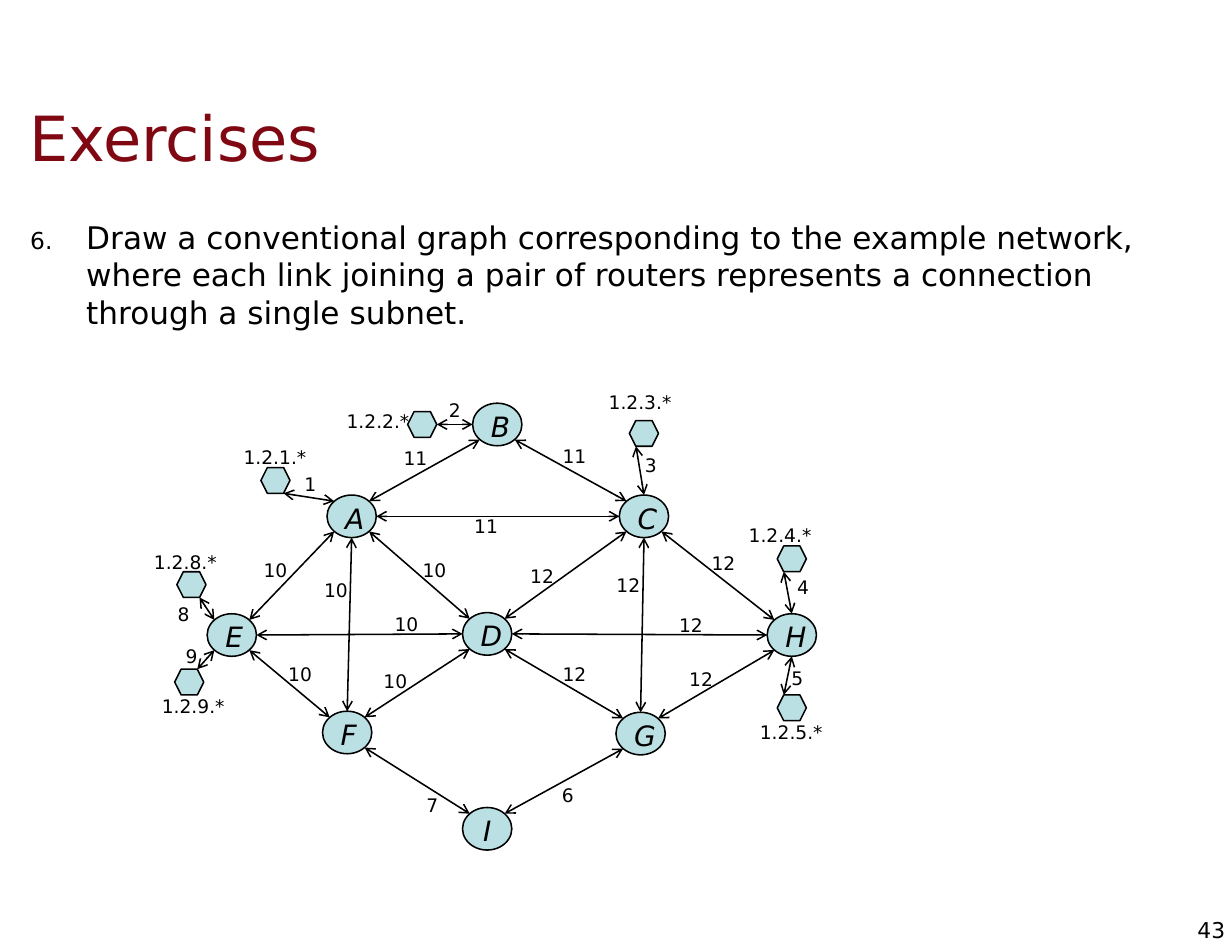
from typing import NamedTuple

from lxml import etree
from pptx import Presentation
from pptx import util as u
from pptx.dml.color import RGBColor
from pptx.enum import shapes, text
from pptx.oxml import ns

FONT = "DejaVu Sans"
COLORS = {"title": "7F0813", "ink": "000000", "node": "BBE0E3"}
CELL = u.Inches(0.1)


class Point(NamedTuple):
    column: float
    row: float


class Size(NamedTuple):
    columns: float
    rows: float


class Link(NamedTuple):
    ends: str
    weight: str
    label: Point


class Subnet(NamedTuple):
    address: str
    router: str
    center: Point
    address_center: Point
    weight: str
    label: Point


ROUTER_SIZE = Size(4.4, 3.8)
SUBNET_SIZE = Size(2.6, 2.3)
WEIGHT_SIZE = Size(5.4, 2)
ADDRESS_SIZE = Size(6.7, 2)
ROUTER_CORNER = Size(0.71, 0.71)
SUBNET_CORNER = Size(0.55, 1)

ROUTERS = {
    "A": Point(31.4, 46.1), "B": Point(44.4, 37.9), "C": Point(57.5, 46.1),
    "D": Point(43.5, 56.6), "E": Point(20.7, 56.7), "F": Point(31, 65.4),
    "G": Point(57.2, 65.5), "H": Point(70.7, 56.7), "I": Point(43.5, 74),
}

LINKS = [
    Link("AB", "11", Point(37.1, 40.9)), Link("CA", "11", Point(43.4, 47)),
    Link("BC", "11", Point(51.3, 40.7)), Link("CD", "12", Point(48.4, 51.4)),
    Link("HD", "12", Point(61.7, 55.8)), Link("GC", "12", Point(56.1, 52.2)),
    Link("IG", "6", Point(50.7, 71)), Link("DG", "12", Point(51.3, 60.2)),
    Link("IF", "7", Point(38.6, 71.9)), Link("EF", "10", Point(26.8, 60.2)),
    Link("FD", "10", Point(35.3, 60.8)), Link("AD", "10", Point(38.8, 50.9)),
    Link("FA", "10", Point(30, 52.7)), Link("EA", "10", Point(24.6, 50.9)),
    Link("DE", "10", Point(36.3, 55.7)), Link("CH", "12", Point(64.6, 50.3)),
    Link("HG", "12", Point(62.6, 60.6)),
]

SUBNETS = [
    Subnet("1.2.1.*", "A", Point(24.6, 42.9), Point(24.55, 40.8), "1", Point(27.7, 43.2)),
    Subnet("1.2.2.*", "B", Point(37.7, 37.9), Point(33.75, 37.6), "2", Point(40.6, 36.6)),
    Subnet("1.2.3.*", "C", Point(57.5, 38.7), Point(57.15, 35.9), "3", Point(58.1, 41.5)),
    Subnet("1.2.4.*", "H", Point(70.7, 49.9), Point(69.65, 47.8), "4", Point(71.7, 52.4)),
    Subnet("1.2.5.*", "H", Point(70.7, 63.2), Point(70.65, 65.4), "5", Point(71.2, 60.5)),
    Subnet("1.2.8.*", "E", Point(17.1, 52.2), Point(16.55, 50.2), "8", Point(16.4, 54.8)),
    Subnet("1.2.9.*", "E", Point(16.9, 60.9), Point(17.25, 63), "9", Point(17.1, 58.6)),
]


def color(name: str) -> RGBColor:
    return RGBColor.from_string(COLORS[name])


def cells(*counts: float) -> list[int]:
    return [round(count * CELL) for count in counts]


def box(center: Point, size: Size) -> list[int]:
    return cells(center.column - size.columns / 2, center.row - size.rows / 2, *size)


def set_insets(frame, left: float, top: float, right: float, bottom: float) -> None:
    frame.margin_left, frame.margin_top, frame.margin_right, frame.margin_bottom = cells(
        left, top, right, bottom)


def write(paragraph, words: str, size: float, ink: str = "ink", italic: bool = False) -> None:
    run = paragraph.add_run()
    run.text = words
    run.font.name = FONT
    run.font.size = u.Pt(size)
    run.font.italic = italic
    run.font.color.rgb = color(ink)


def add_node(slide, preset, center: Point, size: Size):
    shape = slide.shapes.add_shape(preset, *box(center, size))
    shape.shadow.inherit = False
    shape.fill.solid()
    shape.fill.fore_color.rgb = color("node")
    shape.line.color.rgb = color("ink")
    shape.line.width = u.Pt(1)
    return shape


def add_router(slide, name: str, center: Point) -> None:
    frame = add_node(slide, shapes.MSO_SHAPE.OVAL, center, ROUTER_SIZE).text_frame
    set_insets(frame, 1, 0, 1, 0.5)
    frame.vertical_anchor = text.MSO_ANCHOR.TOP
    frame.paragraphs[0].alignment = text.PP_ALIGN.CENTER
    write(frame.paragraphs[0], name, 18, italic=True)


def add_label(slide, words: str, center: Point, size: Size, points: float = 12,
              alignment=text.PP_ALIGN.CENTER, wrap: bool = True) -> None:
    frame = slide.shapes.add_textbox(*box(center, size)).text_frame
    set_insets(frame, 0, 0, 0, 0)
    frame.word_wrap = wrap
    frame.vertical_anchor = text.MSO_ANCHOR.MIDDLE
    frame.paragraphs[0].alignment = alignment
    write(frame.paragraphs[0], words, points)


def direction(along: float, across: float) -> int:
    if abs(along) < 0.41 * abs(across):
        return 0
    return 1 if along > 0 else -1


def edge(center: Point, target: Point, size: Size, corner: Size, upright: bool = True) -> Point:
    across, down = target.column - center.column, target.row - center.row
    horizontal, vertical = direction(across, down), direction(down, across)
    if not horizontal and not upright:
        horizontal = -1
    share = corner if horizontal and vertical else Size(1, 1)
    return Point(center.column + horizontal * share.columns * size.columns / 2,
                 center.row + vertical * share.rows * size.rows / 2)


def add_arrow(slide, start: Point, end: Point) -> None:
    connector = slide.shapes.add_connector(
        shapes.MSO_CONNECTOR.STRAIGHT, *cells(*start, *end))
    connector.line.color.rgb = color("ink")
    connector.line.width = u.Pt(1)
    line = connector.line._get_or_add_ln()
    for tag in ("a:headEnd", "a:tailEnd"):
        etree.SubElement(line, ns.qn(tag), type="arrow")
    etree.SubElement(connector._element.spPr, ns.qn("a:effectLst"))


def place(placeholder, left: float, top: float, width: float, height: float):
    placeholder.left, placeholder.top, placeholder.width, placeholder.height = cells(
        left, top, width, height)
    frame = placeholder.text_frame
    set_insets(frame, 1.1, 0.6, 1.1, 0.6)
    frame.auto_size = text.MSO_AUTO_SIZE.NONE
    frame.paragraphs[0].alignment = text.PP_ALIGN.LEFT
    return frame


def number_from(paragraph, start: int) -> None:
    properties = paragraph._p.get_or_add_pPr()
    properties.set("marL", str(u.Inches(0.61)))
    properties.set("indent", str(-u.Inches(0.5)))
    ink = etree.SubElement(properties, ns.qn("a:buClr"))
    etree.SubElement(ink, ns.qn("a:srgbClr"), val=COLORS["ink"])
    etree.SubElement(properties, ns.qn("a:buSzPct"), val="75000")
    etree.SubElement(properties, ns.qn("a:buFont"), typeface=FONT)
    etree.SubElement(properties, ns.qn("a:buAutoNum"), type="arabicPeriod", startAt=str(start))
    properties.set("marL", str(u.Inches(0.64)))


def main() -> None:
    presentation = Presentation()
    presentation.slide_width, presentation.slide_height = cells(110, 85)
    slide = presentation.slides.add_slide(presentation.slide_layouts[1])
    title = place(slide.shapes.title, 1.5, 7, 105.3, 10.4)
    title.vertical_anchor = text.MSO_ANCHOR.MIDDLE
    write(title.paragraphs[0], "Exercises", 40, "title")
    exercise = place(slide.placeholders[1], 0.2, 18.9, 109.8, 66.1).paragraphs[0]
    exercise.space_before = u.Pt(0)
    number_from(exercise, 6)
    write(exercise, "Draw a conventional graph corresponding to the example network, "
          "where each link joining a pair of routers represents a connection "
          "through a single subnet.", 20)
    add_label(slide, "43", Point(107.7, 83), Size(3.4, 2.4), 14, text.PP_ALIGN.RIGHT, False)
    for name, center in ROUTERS.items():
        add_router(slide, name, center)
    for link in LINKS:
        first, second = (ROUTERS[name] for name in link.ends)
        add_arrow(slide, edge(first, second, ROUTER_SIZE, ROUTER_CORNER),
                  edge(second, first, ROUTER_SIZE, ROUTER_CORNER))
        add_label(slide, link.weight, link.label, WEIGHT_SIZE)
    for subnet in SUBNETS:
        router = ROUTERS[subnet.router]
        add_node(slide, shapes.MSO_SHAPE.HEXAGON, subnet.center, SUBNET_SIZE)
        add_arrow(slide, edge(subnet.center, router, SUBNET_SIZE, SUBNET_CORNER, False),
                  edge(router, subnet.center, ROUTER_SIZE, ROUTER_CORNER))
        add_label(slide, subnet.weight, subnet.label, WEIGHT_SIZE)
        add_label(slide, subnet.address, subnet.address_center, ADDRESS_SIZE)
    presentation.save("out.pptx")


if __name__ == "__main__":
    main()
